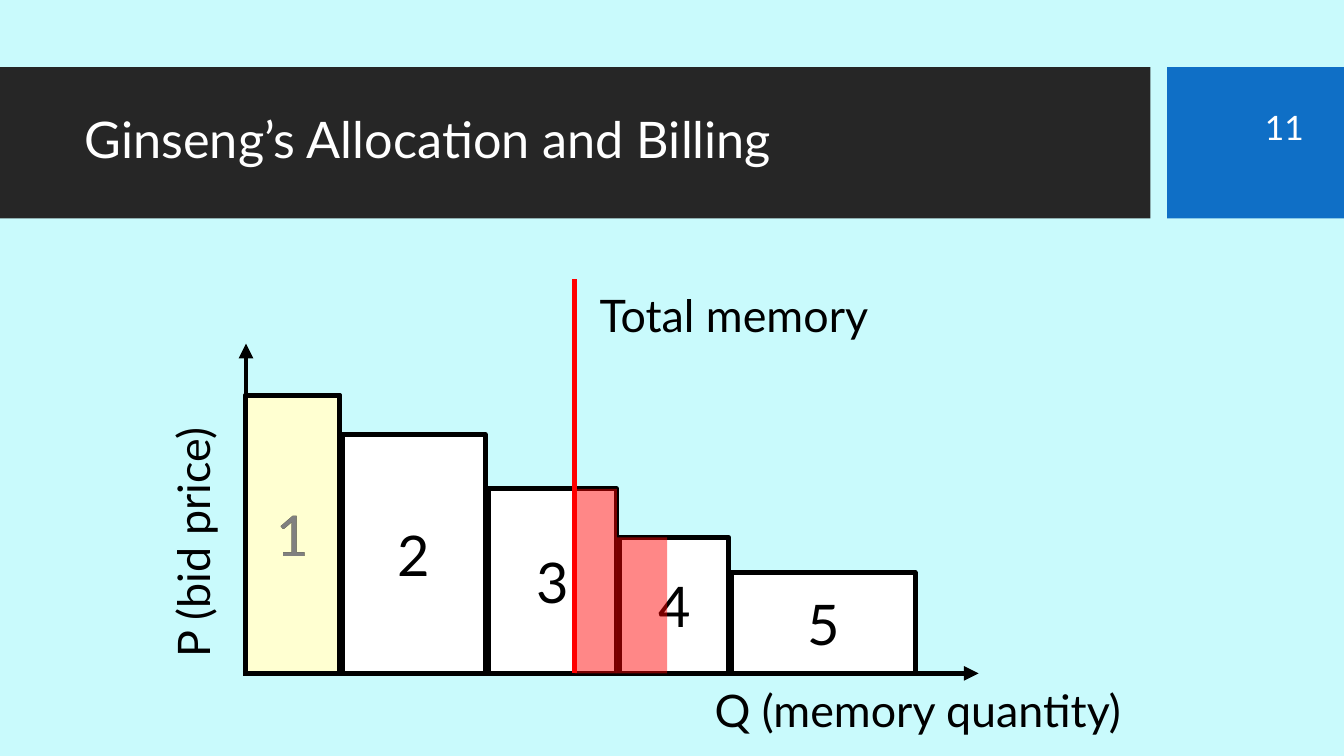
from dataclasses import dataclass

from lxml import etree
from pptx import Presentation
from pptx.dml.color import RGBColor
from pptx.enum import shapes, text
from pptx.oxml.ns import qn
from pptx.util import Pt


@dataclass(frozen=True)
class Theme:
    font: str = "Lato"
    back: str = "C9FAFC"
    band: str = "262626"
    accent: str = "0F6FC6"
    ink: str = "000000"
    paper: str = "FFFFFF"
    muted: str = "808080"
    glow: str = "FFFF00"
    alert: str = "FF0000"
    title: int = 36
    number: int = 24
    label: int = 32
    bar: int = 40
    line: float = 3.5


class Deck:
    """Holds the theme and the current slide."""

    def __init__(self, theme):
        self.theme = theme
        self.prs = Presentation()
        self.prs.slide_width, self.prs.slide_height = Pt(960), Pt(540)
        self.slide = self.prs.slides.add_slide(self.prs.slide_layouts[5])
        fill = self.slide.background.fill
        fill.solid()
        fill.fore_color.rgb = RGBColor.from_string(theme.back)

    def fill_text(self, shape, words, size, color, align, anchor):
        frame = shape.text_frame
        frame.text = words
        frame.vertical_anchor = anchor
        para = frame.paragraphs[0]
        para.alignment = align
        para.font.name, para.font.size = self.theme.font, Pt(size)
        para.font.color.rgb = RGBColor.from_string(color)
        return para

    def title(self, words, x, y, w, h):
        """Place the title in front of the shapes drawn so far."""
        box = self.slide.shapes.title
        box.left, box.top, box.width, box.height = Pt(x), Pt(y), Pt(w), Pt(h)
        para = self.fill_text(box, words, self.theme.title, self.theme.paper,
                              text.PP_ALIGN.LEFT, text.MSO_ANCHOR.MIDDLE)
        para.line_spacing = 0.9
        box.text_frame.auto_size = text.MSO_AUTO_SIZE.NONE
        tree = box._element.getparent()
        tree.append(box._element)

    def rect(self, x, y, w, h, color, alpha=None, edge=False):
        box = self.slide.shapes.add_shape(
            shapes.MSO_SHAPE.RECTANGLE, Pt(x), Pt(y), Pt(w), Pt(h))
        box.shadow.inherit = False
        box.fill.solid()
        box.fill.fore_color.rgb = RGBColor.from_string(color)
        if alpha is not None:
            tint = box._element.spPr.find(".//" + qn("a:srgbClr"))
            etree.SubElement(tint, qn("a:alpha"), val=str(alpha * 1000))
        if edge:
            box.line.color.rgb = RGBColor.from_string(self.theme.ink)
            box.line.width = Pt(self.theme.line)
        else:
            box.line.fill.background()
        return box

    def bar(self, name, x, y, w, h, fill, color, alpha=None):
        box = self.rect(x, y, w, h, fill, alpha, edge=True)
        self.fill_text(box, name, self.theme.bar, color,
                       text.PP_ALIGN.CENTER, text.MSO_ANCHOR.MIDDLE)

    def label(self, words, x, y, w, h, turn=0):
        box = self.slide.shapes.add_textbox(Pt(x), Pt(y), Pt(w), Pt(h))
        self.fill_text(box, words, self.theme.label, self.theme.ink,
                       text.PP_ALIGN.LEFT, text.MSO_ANCHOR.TOP)
        box.text_frame.word_wrap = False
        box.text_frame.auto_size = text.MSO_AUTO_SIZE.SHAPE_TO_FIT_TEXT
        box.rotation = turn

    def number(self, words, x, y, w, h):
        box = self.slide.shapes.add_textbox(Pt(x), Pt(y), Pt(w), Pt(h))
        box.text_frame.word_wrap = True
        self.fill_text(box, words, self.theme.number, self.theme.paper,
                       text.PP_ALIGN.LEFT, text.MSO_ANCHOR.MIDDLE)

    def line(self, x1, y1, x2, y2, color, arrow=False):
        link = self.slide.shapes.add_connector(
            shapes.MSO_CONNECTOR.STRAIGHT, Pt(x1), Pt(y1), Pt(x2), Pt(y2))
        link.line.color.rgb = RGBColor.from_string(color)
        link.line.width = Pt(self.theme.line)
        props = link._element.spPr
        if arrow:
            etree.SubElement(props.find(qn("a:ln")), qn("a:tailEnd"),
                             type="triangle")
        etree.SubElement(props, qn("a:effectLst"))


def main():
    look = Theme()
    deck = Deck(look)
    base, left, limit = 481, 175.7, 410.4

    deck.rect(0, 48, 821.8, 108, look.band)
    deck.rect(833.6, 48, 126.4, 108, look.accent)
    deck.title("Ginseng’s Allocation and Billing", 53.3, 59, 756.7, 85)

    deck.line(173.5, base, 699, base, look.ink, arrow=True)
    deck.line(left, base, left, 245.5, look.ink, arrow=True)

    # Left edge, width and height of each bid
    bids = [(left, 67, 198.7), (244.4, 102.2, 170.6), (349.2, 91.4, 131.8),
            (442.8, 77.8, 97.2), (522.7, 131, 72)]
    for rank, (x, w, h) in enumerate(bids, 1):
        deck.bar(str(rank), x, base - h, w, h, look.paper, look.ink)

    deck.line(limit, 199.4, limit, base, look.alert)
    x, w, h = bids[0]
    deck.bar("1", x, base - h, w, h, look.glow, look.muted, alpha=18)

    deck.label("Total memory", 421.2, 202.3, 213.1, 46)
    deck.label("Q (memory quantity)", 503.3, 483.8, 318.2, 46)
    deck.label("P (bid price)", 40.3, 356.4, 194.4, 46, turn=270)

    edge = bids[2][0] + bids[2][1]
    for x, w, h in [(limit, edge - limit, bids[2][2]),
                    (edge, 36, bids[3][2])]:
        deck.rect(x, base - h, w, h, look.alert, alpha=47)

    deck.number("11", 896.4, 59, 59.8, 64)
    deck.prs.save("out.pptx")


if __name__ == "__main__":
    main()
